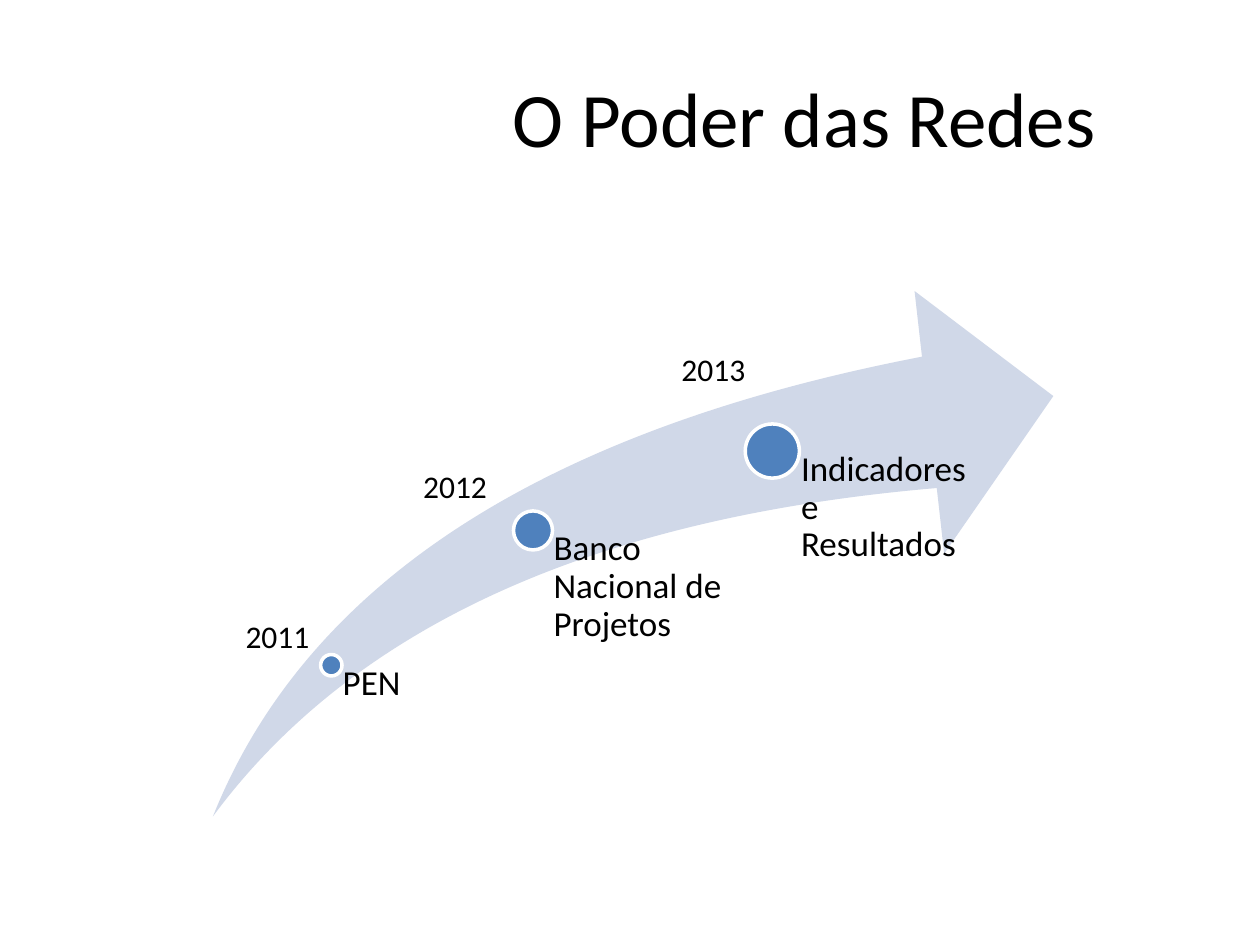
import pptx
import pptx.util
import pptx.dml.color
import pptx.enum.shapes
import pptx.enum.text

Inches = pptx.util.Inches
MSO_SHAPE = pptx.enum.shapes.MSO_SHAPE
PP_ALIGN = pptx.enum.text.PP_ALIGN
MSO_ANCHOR = pptx.enum.text.MSO_ANCHOR

COLORS = {"text": "000000", "arrow": "D0D8E8", "dot": "4F81BD", "outline": "FFFFFF"}
MILESTONES = [
    {"year": "2011", "label": "PEN", "center": (0.94, 2.97), "size": 0.17,
     "year_at": (0.16, 2.54), "label_width": 1.55},
    {"year": "2012", "label": "Banco Nacional de Projetos", "center": (2.54, 1.9), "size": 0.31,
     "year_at": (1.57, 1.35), "label_width": 1.6},
    {"year": "2013", "label": "Indicadores e Resultados", "center": (4.44, 1.27), "size": 0.43,
     "year_at": (3.62, 0.42), "label_width": 1.6},
]


def rgb(name):
    return pptx.dml.color.RGBColor.from_string(COLORS[name])


def add_text(s, text, box, size, align=PP_ALIGN.LEFT, anchor=MSO_ANCHOR.TOP,
             wrap=True, insets=(0.1, 0.05, 0.1, 0.05), spacing=None):
    tf = s.shapes.add_textbox(*map(Inches, box)).text_frame
    tf.word_wrap = wrap
    tf.vertical_anchor = anchor
    tf.margin_left, tf.margin_top, tf.margin_right, tf.margin_bottom = map(Inches, insets)
    p = tf.paragraphs[0]
    p.alignment = align
    if spacing:
        p.line_spacing = spacing
    r = p.add_run()
    r.text = text
    r.font.name = "Calibri"
    r.font.size = pptx.util.Pt(size)
    r.font.color.rgb = rgb("text")
    return tf


def add_filled(s, kind, box, fill):
    sp = s.shapes.add_shape(kind, *map(Inches, box))
    sp.shadow.inherit = False
    sp.fill.solid()
    sp.fill.fore_color.rgb = rgb(fill)
    sp.line.fill.background()
    return sp


def add_title(s, box):
    add_text(s, "O Poder das Redes", box, 44, align=PP_ALIGN.CENTER, anchor=MSO_ANCHOR.MIDDLE)


def add_timeline(s, box):
    left, top, width, height = box
    arrow = add_filled(s, MSO_SHAPE.SWOOSH_ARROW, box, "arrow")
    arrow.adjustments[0] = 0.25
    arrow.adjustments[1] = 0.25
    for m in MILESTONES:
        x, y = left + m["center"][0], top + m["center"][1]
        d = m["size"]
        dot = add_filled(s, MSO_SHAPE.OVAL, (x - d / 2, y - d / 2, d, d), "dot")
        dot.line.color.rgb = rgb("outline")
        dot.line.width = pptx.util.Pt(2)
        add_text(s, m["label"], (x, y, m["label_width"], top + height - y), 20,
                 insets=(d * 0.53, 0, 0, 0), spacing=0.9)
    for m in MILESTONES:
        x, y = m["year_at"]
        tf = add_text(s, m["year"], (left + x, top + y, 0.71, 0.4), 18, wrap=False)
        tf.auto_size = pptx.enum.text.MSO_AUTO_SIZE.SHAPE_TO_FIT_TEXT


def main():
    prs = pptx.Presentation()
    prs.slide_width, prs.slide_height = Inches(10), Inches(7.5)
    s = prs.slides.add_slide(prs.slide_layouts[6])
    add_title(s, (3.27, 0.3, 6.23, 1.25))
    add_timeline(s, (1.69, 2.31, 6.67, 4.17))
    prs.save("out.pptx")


if __name__ == "__main__":
    main()
